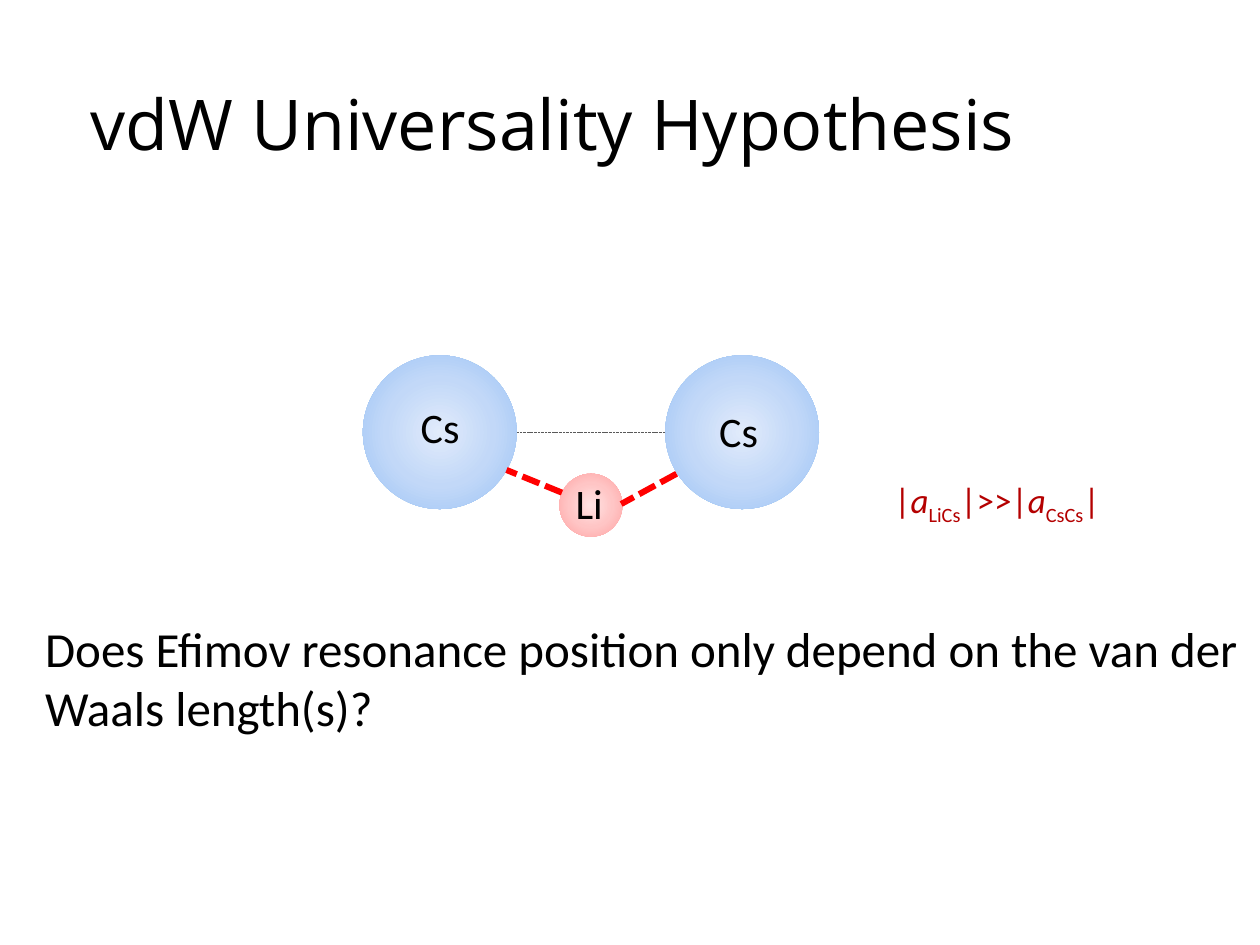
from lxml import etree
from pptx import Presentation
from pptx.dml.color import RGBColor
from pptx.enum.dml import MSO_LINE
from pptx.enum.shapes import MSO_CONNECTOR, MSO_SHAPE
from pptx.enum.text import MSO_ANCHOR, MSO_AUTO_SIZE, PP_ALIGN
from pptx.oxml import parse_xml
from pptx.oxml.ns import nsdecls, qn
from pptx.util import Inches, Pt

OVAL = MSO_SHAPE.OVAL
STRAIGHT = MSO_CONNECTOR.STRAIGHT
DASH = MSO_LINE.SQUARE_DOT
FIT = MSO_AUTO_SIZE.SHAPE_TO_FIT_TEXT

BLACK = RGBColor(0x00, 0x00, 0x00)
RED = RGBColor(0xFF, 0x00, 0x00)
DARK_RED = RGBColor(0xB4, 0x00, 0x00)
GREY = RGBColor(0x59, 0x59, 0x59)
CS_COLORS = ("E1EBFB", "C2D8F8", "9AC3F5")
LI_COLORS = ("FFE3E3", "FFC5C5", "FFA0A0")

TITLE = "vdW Universality Hypothesis"
# left, top, diameter, gradient from centre to edge
ATOMS = [
    (2.88, 2.82, 1.22, CS_COLORS),
    (5.28, 2.82, 1.22, CS_COLORS),
    (4.44, 3.76, 0.5, LI_COLORS),
]
# start, end, colour, width
BONDS = [
    ((4.46, 3.91), (4.02, 3.73), RED, 3.5),
    ((5.28, 3.43), (4.1, 3.43), GREY, 0.5),
    ((5.37, 3.76), (4.93, 4), RED, 3.5),
]
# box, wrap, size, colour, runs as (text, style)
TEXTS = [
    ((3.24, 3.14, 0.56, 0.5), True, 24, BLACK, [("Cs", "")]),
    ((5.61, 3.17, 0.56, 0.5), True, 24, BLACK, [("Cs", "")]),
    ((4.47, 3.74, 0.56, 0.5), True, 24, BLACK, [("Li", "")]),
    ((7, 3.75, 1.91, 0.44), False, 20, DARK_RED, [
        ("|", ""), ("a", "italic"), ("LiCs", "sub"), ("|>>|", ""),
        ("a", "italic"), ("CsCs", "sub"), ("|", "")]),
    ((0.26, 4.86, 9.98, 1.04), True, 28, BLACK, [
        ("Does Efimov resonance position only depend on the van der "
         "Waals length(s)?", "")]),
]


def add_run(p, text, font, size, color, style=""):
    r = p.add_run()
    r.text = text
    r.font.name = font
    r.font.size = Pt(size)
    r.font.color.rgb = color
    if style == "italic":
        r.font.italic = True
    elif style == "sub":
        r._r.get_or_add_rPr().set("baseline", "-25000")


def add_atom(slide, left, top, diameter, colors):
    sp = slide.shapes.add_shape(OVAL, Inches(left), Inches(top),
                                Inches(diameter), Inches(diameter))
    sp.shadow.inherit = False
    sp.line.fill.background()
    stops = "".join(
        f'<a:gs pos="{i * 50000}"><a:srgbClr val="{color}"/></a:gs>'
        for i, color in enumerate(colors))
    radial = parse_xml(
        f'<a:gradFill {nsdecls("a")} rotWithShape="1"><a:gsLst>{stops}</a:gsLst>'
        '<a:path path="circle"><a:fillToRect l="50000" t="50000" r="50000" '
        'b="50000"/></a:path></a:gradFill>')
    sp._element.spPr.find(qn("a:prstGeom")).addnext(radial)


def add_bond(slide, start, end, color, width):
    bond = slide.shapes.add_connector(
        STRAIGHT, *(Inches(v) for v in start + end))
    bond.line.color.rgb = color
    bond.line.width = Pt(width)
    bond.line.dash_style = DASH
    etree.SubElement(bond._element.spPr, qn("a:effectLst"))


def add_text(slide, box, wrap, size, color, runs):
    tf = slide.shapes.add_textbox(*(Inches(v) for v in box)).text_frame
    tf.word_wrap = wrap
    tf.auto_size = FIT
    for text, style in runs:
        add_run(tf.paragraphs[0], text, "Calibri", size, color, style)


def main():
    prs = Presentation()
    prs.slide_width, prs.slide_height = Inches(10), Inches(7.5)
    slide = prs.slides.add_slide(prs.slide_layouts[5])

    title = slide.shapes.title
    title.left, title.top = Inches(0.62), Inches(0.29)
    title.width, title.height = Inches(8.62), Inches(1.45)
    tf = title.text_frame
    tf.vertical_anchor = MSO_ANCHOR.MIDDLE
    p = tf.paragraphs[0]
    p.alignment = PP_ALIGN.LEFT
    p.line_spacing = 0.9
    add_run(p, TITLE, "Open Sans", 40, BLACK)

    for atom in ATOMS:
        add_atom(slide, *atom)
    for bond in BONDS:
        add_bond(slide, *bond)
    for text in TEXTS:
        add_text(slide, *text)

    prs.save("out.pptx")


if __name__ == "__main__":
    main()
